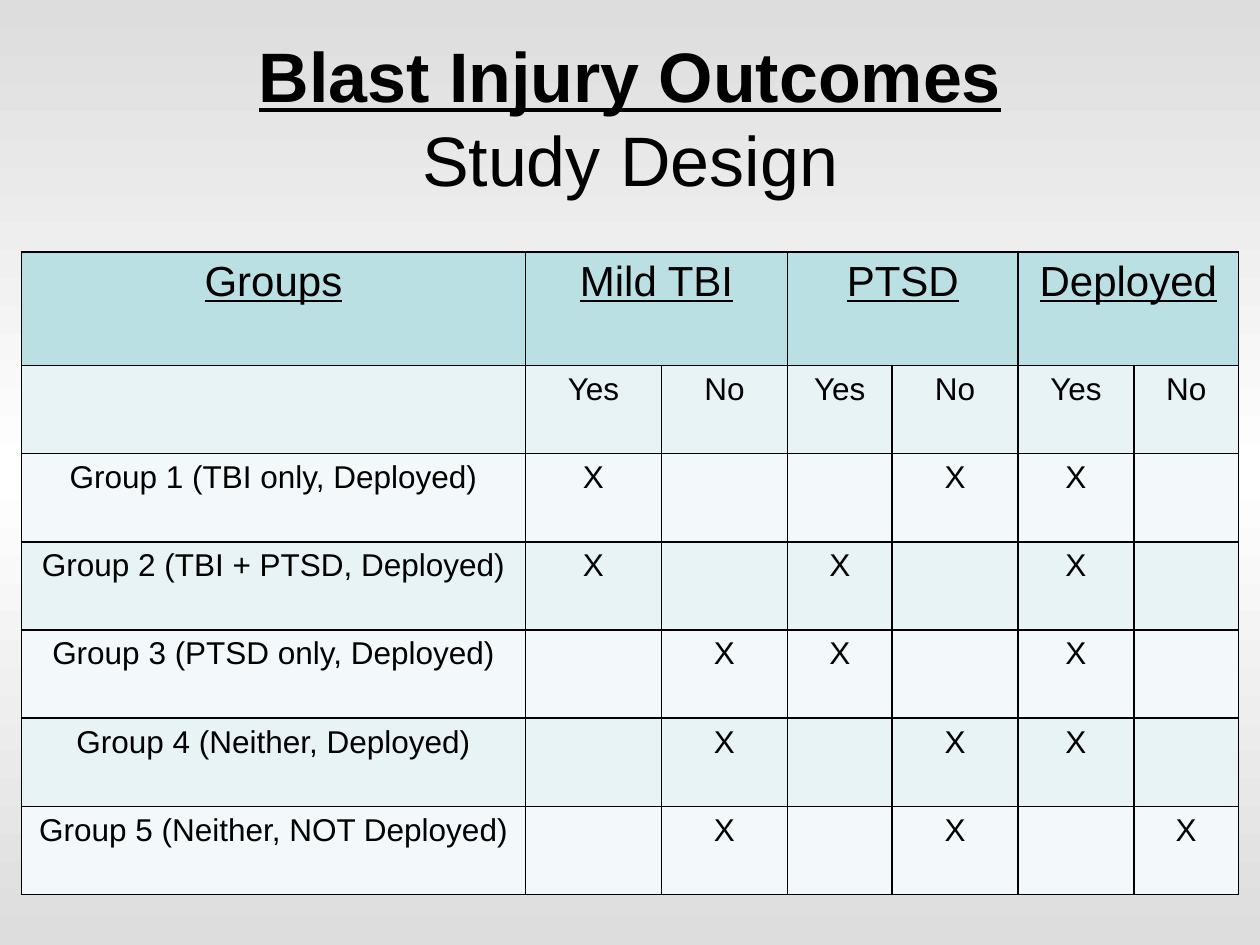
from copy import deepcopy

from lxml.etree import SubElement
from pptx import Presentation
from pptx.dml.color import RGBColor
from pptx.enum.text import MSO_ANCHOR, MSO_AUTO_SIZE, PP_ALIGN
from pptx.oxml.ns import qn
from pptx.util import Inches, Pt

BLACK = RGBColor(0x00, 0x00, 0x00)
WHITE = RGBColor(0xFF, 0xFF, 0xFF)
GREY = RGBColor(0xDD, 0xDD, 0xDD)
HEADER = RGBColor(0xBB, 0xE0, 0xE3)
BAND_DARK = RGBColor(0xE7, 0xF3, 0xF4)
BAND_LIGHT = RGBColor(0xF3, 0xF9, 0xFA)
FONT = "Arial"

COL_WIDTHS = [4, 1.08, 1, 0.83, 1, 0.92, 0.83]
ROW_HEIGHTS = [0.9] + [0.7] * 6
MEASURES = ["Mild TBI", "PTSD", "Deployed"]
GROUPS = [
    ("Group 1 (TBI only, Deployed)", "YNY"),
    ("Group 2 (TBI + PTSD, Deployed)", "YYY"),
    ("Group 3 (PTSD only, Deployed)", "NYY"),
    ("Group 4 (Neither, Deployed)", "NNY"),
    ("Group 5 (Neither, NOT Deployed)", "NNN"),
]


def set_background(s):
    fill = s.background.fill
    fill.gradient()
    fill.gradient_angle = 90
    stops = fill.gradient_stops
    last = s.background._cSld.find(".//" + qn("a:gsLst"))[-1]
    last.addprevious(deepcopy(last))
    for stop, pos, color in zip(stops_of(fill), (0, 0.5, 1), (GREY, WHITE, GREY)):
        stop.position = pos
        stop.color.rgb = color


def stops_of(fill):
    return list(fill.gradient_stops)


def style_run(r, size, bold=False, underline=False):
    r.font.name = FONT
    r.font.size = Pt(size)
    r.font.bold = bold
    r.font.underline = underline
    r.font.color.rgb = BLACK


def set_title(s):
    sp = s.shapes.title
    sp.left, sp.top = Inches(0.5), Inches(0.3)
    sp.width, sp.height = Inches(9), Inches(1.25)
    tf = sp.text_frame
    tf.text = "Blast Injury Outcomes\vStudy Design"
    tf.auto_size = MSO_AUTO_SIZE.NONE
    tf.vertical_anchor = MSO_ANCHOR.MIDDLE
    p = tf.paragraphs[0]
    p.alignment = PP_ALIGN.CENTER
    for r, strong in zip(p.runs, (True, False)):
        style_run(r, 40, strong, strong)


def set_borders(cell):
    tc_pr = cell._tc.get_or_add_tcPr()
    for side in ("lnL", "lnR", "lnT", "lnB"):
        ln = SubElement(tc_pr, qn(f"a:{side}"), w=str(Pt(1)))
        fill = SubElement(ln, qn("a:solidFill"))
        SubElement(fill, qn("a:srgbClr"), val=str(BLACK))


def fill_cell(cell, text, color, size, underline):
    set_borders(cell)
    cell.fill.solid()
    cell.fill.fore_color.rgb = color
    if text:
        cell.text_frame.text = text
        p = cell.text_frame.paragraphs[0]
        p.alignment = PP_ALIGN.CENTER
        style_run(p.runs[0], size, underline=underline)


def table_rows():
    header = ["Groups"]
    for measure in MEASURES:
        header += [measure, ""]
    rows = [header, [""] + ["Yes", "No"] * len(MEASURES)]
    for name, answers in GROUPS:
        row = [name]
        for answer in answers:
            row += ["X", ""] if answer == "Y" else ["", "X"]
        rows.append(row)
    return rows


def add_design_table(s):
    rows = table_rows()
    table = s.shapes.add_table(
        len(ROW_HEIGHTS), len(COL_WIDTHS), Inches(0.17), Inches(2),
        Inches(sum(COL_WIDTHS)), Inches(sum(ROW_HEIGHTS)),
    ).table
    for col, width in zip(table.columns, COL_WIDTHS):
        col.width = Inches(width)
    for row, height in zip(table.rows, ROW_HEIGHTS):
        row.height = Inches(height)
    for i, texts in enumerate(rows):
        is_header = i == 0
        color = HEADER if is_header else BAND_DARK if i % 2 else BAND_LIGHT
        for j, text in enumerate(texts):
            fill_cell(table.cell(i, j), text, color, 24 if is_header else 18, is_header)
    for j in range(1, len(COL_WIDTHS), 2):
        table.cell(0, j).merge(table.cell(0, j + 1))


def main():
    prs = Presentation()
    prs.slide_width, prs.slide_height = Inches(10), Inches(7.5)
    s = prs.slides.add_slide(prs.slide_layouts[5])
    set_background(s)
    set_title(s)
    add_design_table(s)
    prs.save("out.pptx")


if __name__ == "__main__":
    main()
